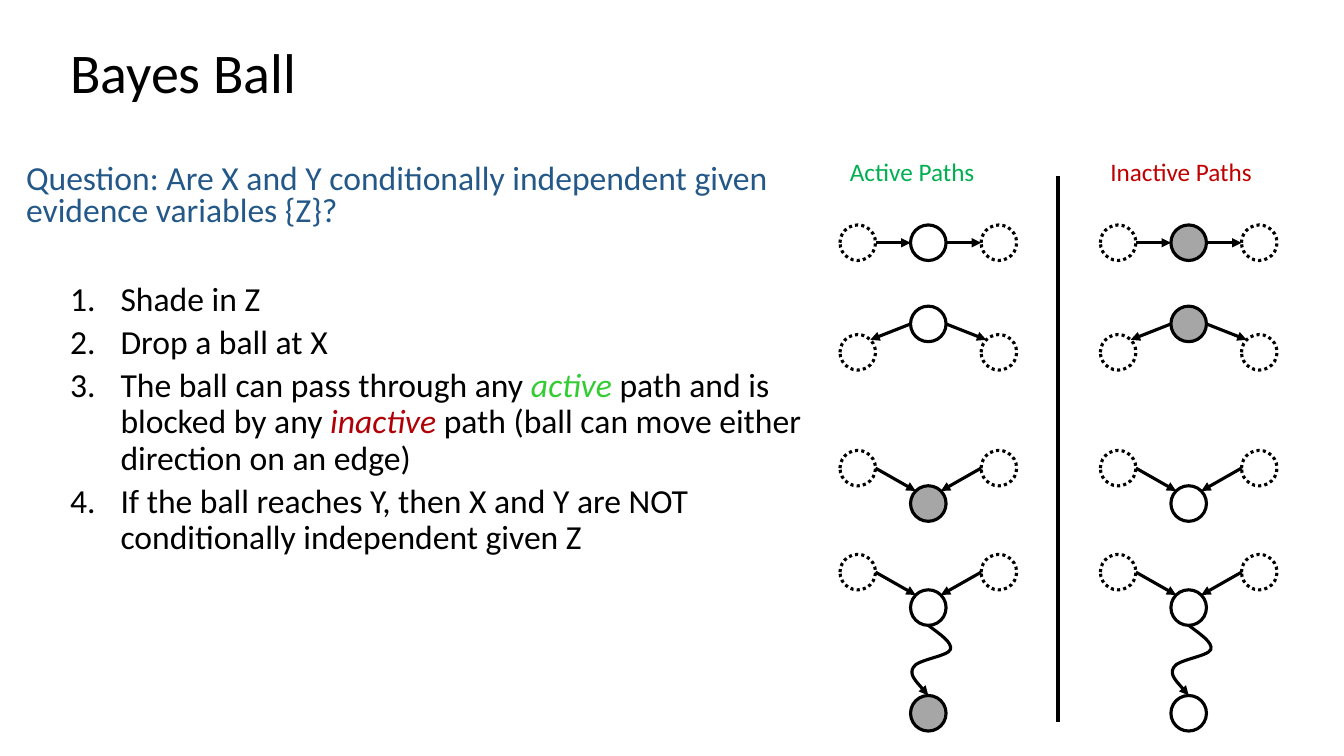
import math

import lxml.etree
import pptx
import pptx.dml.color
import pptx.enum.dml
import pptx.enum.shapes
import pptx.enum.text
import pptx.oxml.ns
import pptx.util

Pt = pptx.util.Pt
qn = pptx.oxml.ns.qn

FONT = "Calibri"
BLACK, WHITE, SHADED = "000000", "FFFFFF", "A6A6A6"
NODE = 25.4   # node diameter
STEP = 50.4   # distance between nodes in a row

QUESTION = "Question: Are X and Y conditionally independent given evidence variables {Z}?"
STEPS = [
    [("Shade in Z", BLACK)],
    [("Drop a ball at X", BLACK)],
    [("The ball can pass through any ", BLACK), ("active ", "33CC33"),
     ("path and is blocked by any ", BLACK), ("inactive ", "AF0007"),
     ("path (ball can move either direction on an edge)", BLACK)],
    [("If the ball reaches Y, then X and Y are NOT conditionally independent given Z",
      BLACK)],
]
# Control points of the wavy edge, measured from the bottom of the middle node
WAVE = [(8.6, 6.5), (17.3, 12.2), (15.8, 17.3),
        (13.7, 22.3), (-8.6, 24.5), (-10.8, 30.2),
        (-13.7, 35.3), (-6.5, 42.5), (0, 50)]


def rgb(color):
    return pptx.dml.color.RGBColor.from_string(color)


def add_run(p, text, size, color):
    r = p.add_run()
    r.text = text
    r.font.name = FONT
    r.font.size = Pt(size)
    r.font.color.rgb = rgb(color)
    return r


def add_text_box(s, x, y, w, h):
    tf = s.shapes.add_textbox(Pt(x), Pt(y), Pt(w), Pt(h)).text_frame
    tf.word_wrap = True
    return tf


def style_line(line, width=2.25, arrow=False):
    line.color.rgb = rgb(BLACK)
    line.width = Pt(width)
    if arrow:
        ln = line._get_or_add_ln()
        lxml.etree.SubElement(ln, qn("a:tailEnd"), type="triangle")


def add_line(s, start, end, width=2.25, arrow=True):
    cx = s.shapes.add_connector(pptx.enum.shapes.MSO_CONNECTOR.STRAIGHT,
                                *(Pt(v) for v in (*start, *end)))
    style_line(cx.line, width, arrow)
    lxml.etree.SubElement(cx._element.spPr, qn("a:effectLst"))


def add_node(s, x, y, fill=WHITE, dotted=False):
    sp = s.shapes.add_shape(pptx.enum.shapes.MSO_SHAPE.OVAL,
                            Pt(x), Pt(y), Pt(NODE), Pt(NODE))
    sp.shadow.inherit = False
    sp.fill.solid()
    sp.fill.fore_color.rgb = rgb(fill)
    style_line(sp.line)
    if dotted:
        sp.line.dash_style = pptx.enum.dml.MSO_LINE.ROUND_DOT


def rim(x, y, degrees):
    """Point on a node's outline, clockwise from its right side."""
    a, radius = math.radians(degrees), NODE / 2
    return x + radius * (1 + math.cos(a)), y + radius * (1 + math.sin(a))


def add_wave(s, x, y):
    """Curved arrow from the middle node down to its descendant."""
    points = [(Pt(x + dx), Pt(y + dy)) for dx, dy in WAVE]
    builder = s.shapes.build_freeform(Pt(x), Pt(y))
    builder.add_line_segments(points, close=False)
    sp = builder.convert_to_shape()
    sp.shadow.inherit = False
    sp.fill.background()
    style_line(sp.line, arrow=True)
    # Turn each three straight segments into one Bezier segment
    outline = sp._element.find(".//" + qn("a:path"))
    segments = outline.findall(qn("a:lnTo"))
    for i in range(0, len(segments), 3):
        bezier = lxml.etree.SubElement(outline, qn("a:cubicBezTo"))
        for segment in segments[i:i + 3]:
            bezier.append(segment[0])
            outline.remove(segment)


def add_triple(s, kind, x, side_y, mid_y, fill):
    """Two dotted nodes around a middle node, joined as chain, fork or collider."""
    left, mid, right = (x, side_y), (x + STEP, mid_y), (x + 2 * STEP, side_y)
    add_node(s, *left, dotted=True)
    add_node(s, *mid, fill=fill)
    add_node(s, *right, dotted=True)
    edges = {
        "chain": [(rim(*left, 0), rim(*mid, 180)), (rim(*mid, 0), rim(*right, 180))],
        "fork": [(rim(*mid, 180), rim(*left, -45)), (rim(*mid, 0), rim(*right, 225))],
        "collider": [(rim(*left, 0), rim(*mid, 225)), (rim(*right, 180), rim(*mid, -45))],
    }
    for start, end in edges[kind]:
        add_line(s, start, end)


def add_panel(s, x, width, title, color, open_fill, collider_fill):
    tf = add_text_box(s, x, 108, width, 29)
    add_run(tf.paragraphs[0], title, 18, color)
    add_triple(s, "chain", x, 160.7, 160.7, open_fill)
    add_triple(s, "fork", x, 239, 218.7, open_fill)
    add_triple(s, "collider", x, 321.7, 347, collider_fill)
    # Collider with an observed or unobserved descendant
    add_triple(s, "collider", x, 396, 421.3, WHITE)
    add_node(s, x + STEP, 496.8, collider_fill)
    add_wave(s, *rim(x + STEP, 421.3, 90))


def add_title(s, text):
    tf = add_text_box(s, 43.2, 28.8, 828, 49.7)
    tf.vertical_anchor = pptx.enum.text.MSO_ANCHOR.MIDDLE
    p = tf.paragraphs[0]
    p.line_spacing = 0.9
    add_run(p, text, 40, BLACK)


def add_body(s):
    tf = add_text_box(s, 11.5, 113.8, 577, 396)
    p = tf.paragraphs[0]
    p.line_spacing = 0.8
    p.space_before = Pt(10)
    add_run(p, QUESTION, 24, "235888")
    # Numbered steps, the first set apart from the question
    for i, parts in enumerate(STEPS):
        p = tf.add_paragraph()
        p.line_spacing = 0.9
        p.space_before = Pt(5 if i else 38)
        pPr = p._p.get_or_add_pPr()
        pPr.set("marL", str(Pt(67.5)))
        pPr.set("indent", str(Pt(-36)))
        lxml.etree.SubElement(pPr, qn("a:buFont"), typeface="+mj-lt")
        lxml.etree.SubElement(pPr, qn("a:buAutoNum"), type="arabicPeriod")
        for text, color in parts:
            r = add_run(p, text, 24, color)
            r.font.italic = color != BLACK


def main():
    prs = pptx.Presentation()
    prs.slide_width, prs.slide_height = Pt(960), Pt(540)
    s = prs.slides.add_slide(prs.slide_layouts[6])

    add_title(s, "Bayes Ball")
    add_body(s)

    # Path panels and the divider between them
    add_panel(s, 600, 126, "Active Paths", "00B050", WHITE, SHADED)
    add_line(s, (756, 126), (756, 516), width=3, arrow=False)
    add_panel(s, 786, 138, "Inactive Paths", "C00000", SHADED, WHITE)

    prs.save("out.pptx")


if __name__ == "__main__":
    main()
